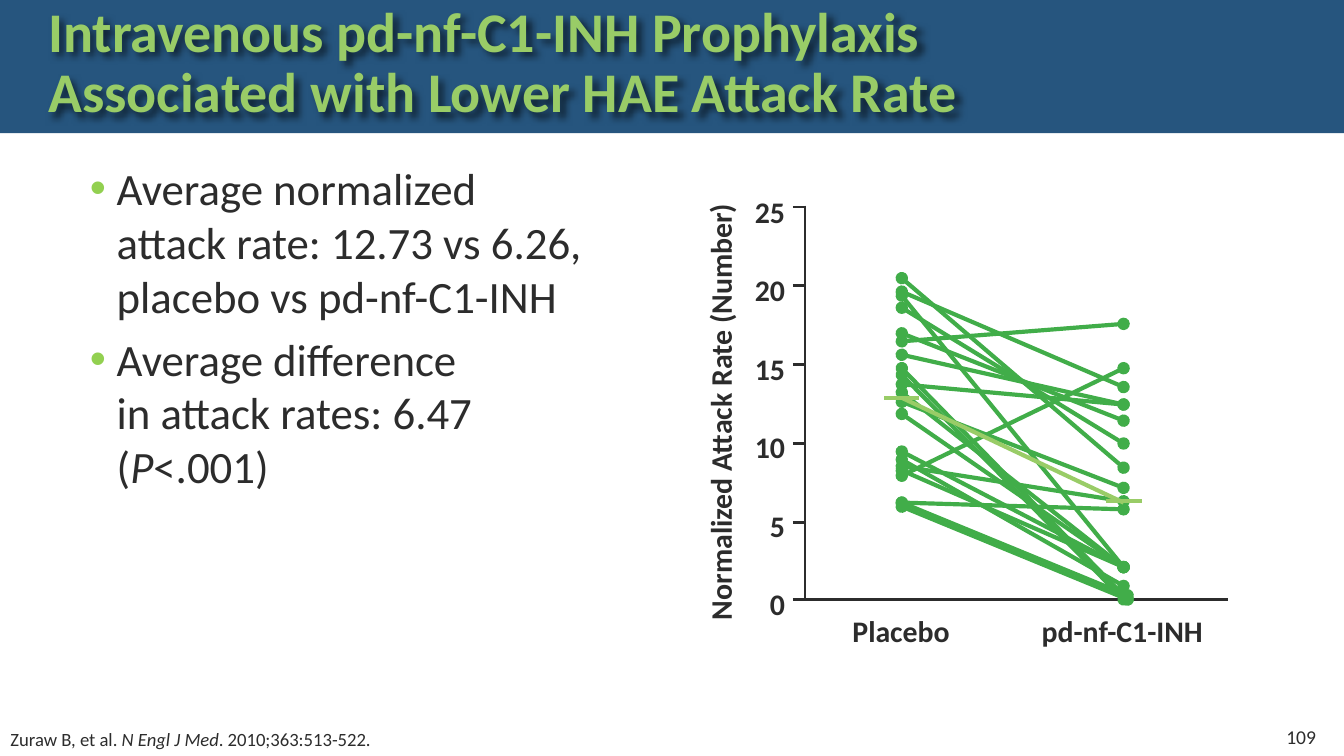
from lxml.etree import SubElement
from pptx import Presentation
from pptx.dml.color import RGBColor
from pptx.enum.shapes import MSO_CONNECTOR as CONN, MSO_SHAPE as SHAPE
from pptx.enum.text import MSO_ANCHOR as ANCHOR, MSO_AUTO_SIZE as AUTO, PP_ALIGN as ALIGN
from pptx.oxml.ns import qn
from pptx.util import Inches, Pt

INK, GREEN, LIME = "2C2C2C", "41AD49", "99CC67"


def rgb(color):
    return RGBColor.from_string(color)


def add_run(p, text, size, color=INK, bold=False, italic=False):
    r = p.add_run()
    r.text = text
    f = r.font
    f.name, f.size, f.bold, f.italic = "Calibri", Pt(size), bold, italic
    f.color.rgb = rgb(color)


prs = Presentation()
prs.slide_width = Inches(10)
prs.slide_height = prs.slide_width * 9 // 16
slide = prs.slides.add_slide(prs.slide_layouts[5])
shapes = slide.shapes

band = shapes.add_shape(SHAPE.RECTANGLE, 0, 0, Inches(10), Inches(0.99))
band.shadow.inherit = False
band.fill.solid()
band.fill.fore_color.rgb = rgb("26557E")
band.line.fill.background()
shapes._spTree.insert(2, band._element)

title = shapes.title
title.left, title.top = Inches(0.26), Inches(0.24)
title.width, title.height = Inches(8.94), Inches(0.74)
effects = SubElement(title._element.spPr, qn("a:effectLst"))
shadow = SubElement(effects, qn("a:outerShdw"), blurRad="50800", dist="38100",
                    dir="2700000", algn="tl")
black = SubElement(shadow, qn("a:srgbClr"), val="000000")
SubElement(black, qn("a:alpha"), val="60000")
tf = title.text_frame
tf.auto_size = AUTO.NONE
tf.word_wrap = True
tf.vertical_anchor = ANCHOR.BOTTOM
p = tf.paragraphs[0]
p.alignment = ALIGN.LEFT
p.line_spacing = 0.9
add_run(p, "Intravenous pd-nf-C1-INH Prophylaxis ", 30, LIME, bold=True)
p.add_line_break()
add_run(p, "Associated with Lower HAE Attack Rate", 30, LIME, bold=True)

findings = [
    [[("Average normalized ", False)], [("attack rate: 12.73 vs 6.26, ", False)],
     [("placebo vs pd-nf-C1-INH", False)]],
    [[("Average difference ", False)],
     [("in attack rates: 6.47 (", False), ("P", True), ("<.001)", False)]],
]
tf = shapes.add_textbox(Inches(0.57), Inches(1.15), Inches(4.12), Inches(3.71)).text_frame
tf.word_wrap = True
for i, lines in enumerate(findings):
    p = tf.add_paragraph() if i else tf.paragraphs[0]
    pPr = p._p.get_or_add_pPr()
    pPr.set("marL", str(Inches(0.2)))
    pPr.set("indent", str(-Inches(0.2)))
    SubElement(SubElement(pPr, qn("a:buClr")), qn("a:srgbClr"), val="92D050")
    SubElement(pPr, qn("a:buSzPct"), val="103000")
    SubElement(pPr, qn("a:buFont"), typeface="Arial")
    SubElement(pPr, qn("a:buChar"), char="•")
    if i:
        p.space_before = Pt(4.8)
    for j, runs in enumerate(lines):
        if j:
            p.add_line_break()
        for text, italic in runs:
            add_run(p, text, 24, italic=italic)

labels = [(5.51, 1.39 + 0.584 * i, 0.43, str(25 - 5 * i), ALIGN.RIGHT, 0) for i in range(6)]
labels += [
    (3.69, 2.88, 3.34, "Normalized Attack Rate (Number)", ALIGN.CENTER, 270),
    (6.24, 4.51, 0.93, "Placebo", ALIGN.CENTER, 0),
    (7.64, 4.51, 1.42, "pd-nf-C1-INH", ALIGN.CENTER, 0),
]
for x, y, w, text, align, rotation in labels:
    sp = shapes.add_textbox(Inches(x), Inches(y), Inches(w), Inches(0.37))
    sp.rotation = rotation
    sp.text_frame.word_wrap = False
    p = sp.text_frame.paragraphs[0]
    p.alignment = align
    add_run(p, text, 16, bold=True)

PLACEBO, TREATED, SHIFTED = 6.71, 8.36, 8.39
patients = [
    (2.07, 3.48), (2.17, 2.88), (2.2, 4.22), (2.29, 3.3), (2.48, 3.13), (2.54, 2.41),
    (2.64, 3.01), (2.74, 4.46, SHIFTED), (2.79, 4.46), (2.86, 3.01), (2.92, 4.22),
    (2.99, 3.63), (3.08, 4.22), (3.36, 4.22), (3.42, 4.36), (3.47, 3.73), (3.54, 2.74),
    (3.5, 4.22), (3.74, 3.79), (3.77, 4.46, SHIFTED), (3.74, 4.43, SHIFTED),
]
segments = [(5.99, 1.53, 5.99, 4.46, INK, 1.5)]
segments += [(5.9, 1.54 + 0.587 * i, 5.99, 1.54 + 0.587 * i, INK, 1.5) for i in range(5)]
segments += [(5.9, 4.46, 9.14, 4.46, INK, 1.5)]
segments += [(PLACEBO, y1, x[0] if x else TREATED, y2, GREEN, 2.25) for y1, y2, *x in patients]
segments += [
    (6.58, 2.96, 6.84, 2.96, LIME, 2.25),
    (8.23, 3.73, 8.5, 3.73, LIME, 2.25),
    (PLACEBO, 2.96, TREATED, 3.74, LIME, 2.25),
]
for x1, y1, x2, y2, color, width in segments:
    line = shapes.add_connector(CONN.STRAIGHT, Inches(x1), Inches(y1), Inches(x2), Inches(y2))
    line.line.color.rgb = rgb(color)
    line.line.width = Pt(width)
    if color == GREEN:
        ln = line.line._get_or_add_ln()
        SubElement(ln, qn("a:headEnd"), type="oval")
        SubElement(ln, qn("a:tailEnd"), type="oval")
    SubElement(line._element.spPr, qn("a:effectLst"))

tf = shapes.add_textbox(Inches(-0.02), Inches(5.37), Inches(2.93), Inches(0.27)).text_frame
tf.word_wrap = False
p = tf.paragraphs[0]
for text, italic in [("Zuraw B, et al. ", False), ("N Engl J Med", True),
                     (". 2010;363:513-522.", False)]:
    add_run(p, text, 10, italic=italic)

tf = shapes.add_textbox(Inches(9.43), Inches(5.33), Inches(0.46), Inches(0.3)).text_frame
tf.word_wrap = True
tf.vertical_anchor = ANCHOR.MIDDLE
p = tf.paragraphs[0]
p.alignment = ALIGN.RIGHT
add_run(p, "109", 10.5)

prs.save("out.pptx")
